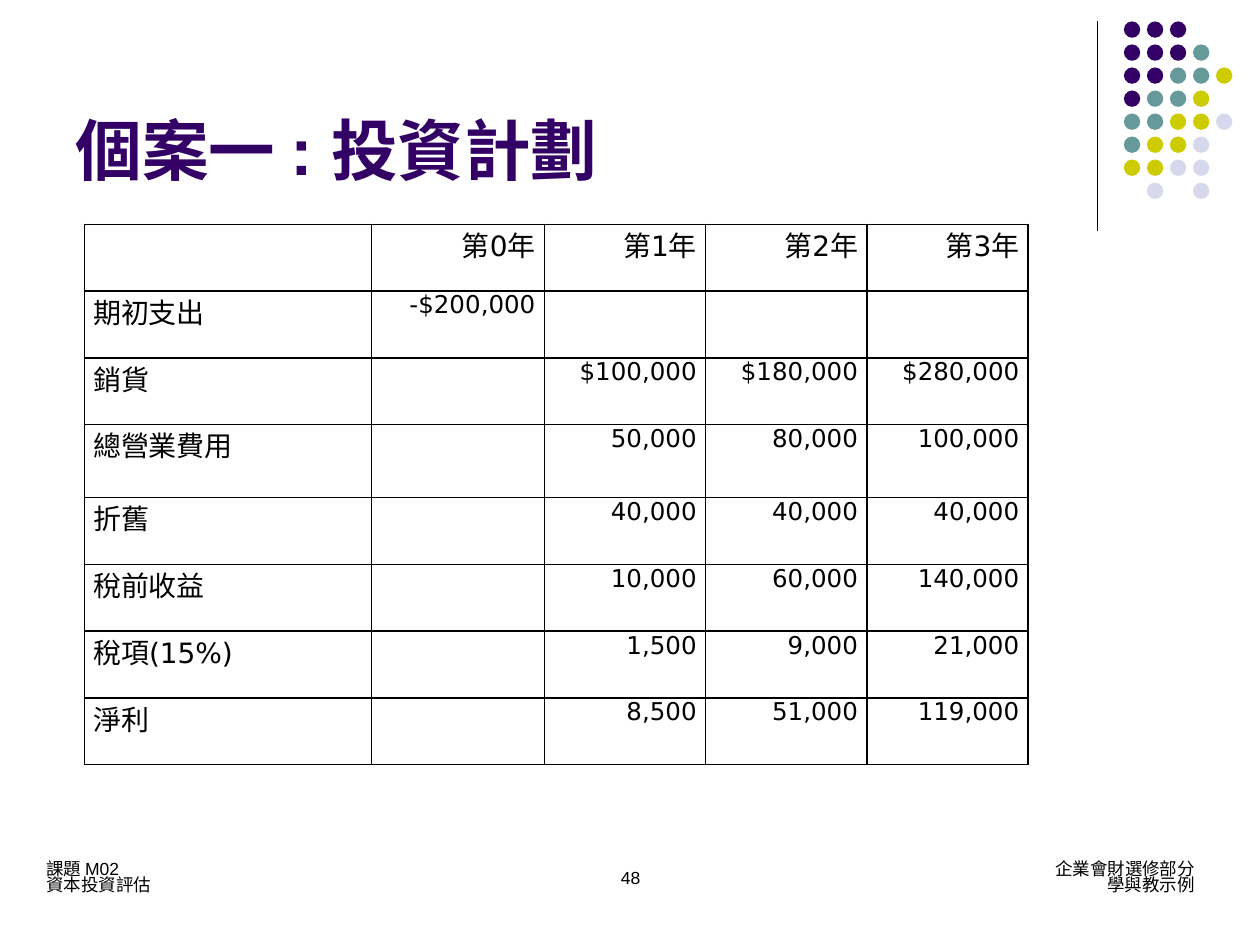
import pptx
import pptx.dml.color
import pptx.enum.shapes
import pptx.enum.text
import pptx.oxml
import pptx.oxml.ns
import pptx.util
from dataclasses import dataclass

Inches = pptx.util.Inches
Pt = pptx.util.Pt
RGB = pptx.dml.color.RGBColor.from_string
ALIGN = pptx.enum.text.PP_ALIGN
ANCHOR = pptx.enum.text.MSO_ANCHOR
AUTO_SIZE = pptx.enum.text.MSO_AUTO_SIZE
SHAPE = pptx.enum.shapes.MSO_SHAPE


@dataclass(frozen=True)
class Theme:
    black: str = "000000"
    purple: str = "330066"
    teal: str = "669999"
    olive: str = "CCCC00"
    lilac: str = "D8D8EC"
    heading_font: str = "Arial"
    table_font: str = "DejaVu Sans"
    total_font: str = "Times New Roman"
    title_size: int = 38
    label_size: int = 16
    value_size: int = 14
    footer_size: int = 10


theme = Theme()


def style(p, font, size, color=theme.black, align=ALIGN.LEFT, bold=False):
    p.font.name = font
    p.font.size = Pt(size)
    p.font.color.rgb = RGB(color)
    p.font.bold = bold
    p.alignment = align


def border(cell):
    """Draw a thin black line on all four sides of a table cell."""
    tcPr = cell._tc.get_or_add_tcPr()
    for i, side in enumerate(("lnL", "lnR", "lnT", "lnB")):
        ln = pptx.oxml.parse_xml(
            f'<a:{side} {pptx.oxml.ns.nsdecls("a")} w="{Pt(1)}"><a:solidFill>'
            f'<a:srgbClr val="{theme.black}"/></a:solidFill></a:{side}>')
        tcPr.insert(i, ln)


prs = pptx.Presentation()
prs.slide_width, prs.slide_height = Inches(10), Inches(7.5)
s = prs.slides.add_slide(prs.slide_layouts[5])

# Corner ornament: a vertical rule and a grid of dots
rule = s.shapes.add_connector(pptx.enum.shapes.MSO_CONNECTOR.STRAIGHT,
                              Inches(8.71), Inches(0.17), Inches(8.71), Inches(1.83))
rule.line.color.rgb = RGB(theme.black)
rule.line.width = Pt(0.75)
rule._element.spPr.append(pptx.oxml.parse_xml(
    f'<a:effectLst {pptx.oxml.ns.nsdecls("a")}/>'))

dot_colors = {"P": theme.purple, "T": theme.teal, "O": theme.olive, "L": theme.lilac}
dot_rows = ["PPP", "PPPT", "PPTTO", "PTTO", "TTOOL", "TOOL", "OOLL", " L L"]
dot_pitch = Inches(0.18) + Pt(0.2)
dots = s.shapes.add_group_shape()
for row, keys in enumerate(dot_rows):
    for col, key in enumerate(keys):
        if key == " ":
            continue
        dot = dots.shapes.add_shape(SHAPE.OVAL, Inches(8.92) + col * dot_pitch,
                                    Inches(0.17) + row * dot_pitch,
                                    Inches(0.13), Inches(0.13))
        dot.shadow.inherit = False
        dot.fill.solid()
        dot.fill.fore_color.rgb = RGB(dot_colors[key])
        dot.line.fill.background()

# Footers and page number: left, top, width, height, alignment, line spacing, lines
footers = [
    (0.27, 6.8, 2.03, 0.35, ALIGN.LEFT, 0.75, ["課題 M02", "資本投資評估"]),
    (7.36, 6.8, 2.22, 0.35, ALIGN.RIGHT, 0.75, ["企業會財選修部分", "學與教示例"]),
    (3.42, 6.83, 3.17, 0.5, ALIGN.CENTER, 1.0, ["48"]),
]
for left, top, width, height, align, spacing, lines in footers:
    box = s.shapes.add_textbox(Inches(left), Inches(top), Inches(width), Inches(height))
    tf = box.text_frame
    tf.word_wrap = True
    tf.auto_size = AUTO_SIZE.SHAPE_TO_FIT_TEXT if len(lines) > 1 else AUTO_SIZE.NONE
    tf.text = "\n".join(lines)
    for p in tf.paragraphs:
        style(p, theme.heading_font, theme.footer_size, align=align)
        p.line_spacing = spacing

# Title
title = s.shapes.title
title.left, title.top = Inches(0.5), Inches(0.13)
title.width, title.height = Inches(8.25), Inches(1.42)
tf = title.text_frame
tf.text = "個案一 : 投資計劃"
tf.word_wrap = True
tf.auto_size = AUTO_SIZE.NONE
tf.vertical_anchor = ANCHOR.BOTTOM
style(tf.paragraphs[0], theme.heading_font, theme.title_size, theme.purple, bold=True)

# Investment plan table
plan = [
    ["", "第0年", "第1年", "第2年", "第3年"],
    ["期初支出", "-$200,000", "", "", ""],
    ["銷貨", "", "$100,000", "$180,000", "$280,000"],
    ["總營業費用", "", "50,000", "80,000", "100,000"],
    ["折舊", "", "40,000", "40,000", "40,000"],
    ["稅前收益", "", "10,000", "60,000", "140,000"],
    ["稅項(15%)", "", "1,500", "9,000", "21,000"],
    ["淨利", "", "8,500", "51,000", "119,000"],
]
col_widths = [2.28, 1.37, 1.28, 1.28, 1.28]
row_heights = [0.53, 0.53, 0.53, 0.58, 0.53, 0.53, 0.53, 0.53]
frame = s.shapes.add_table(len(plan), len(col_widths), Inches(0.67), Inches(1.78),
                           Inches(sum(col_widths)), Inches(sum(row_heights)))
table = frame.table
table.first_row = table.horz_banding = False
for column, width in zip(table.columns, col_widths):
    column.width = Inches(width)
for r, values in enumerate(plan):
    table.rows[r].height = Inches(row_heights[r])
    for c, value in enumerate(values):
        cell = table.cell(r, c)
        cell.fill.background()
        border(cell)
        cell.margin_left = cell.margin_right = Inches(0.07)
        cell.margin_top = cell.margin_bottom = 0
        cell.vertical_anchor = ANCHOR.TOP
        cell.text = value
        is_total_label = r == len(plan) - 1 and c == 0
        style(cell.text_frame.paragraphs[0],
              theme.total_font if is_total_label else theme.table_font,
              theme.label_size if r == 0 or c == 0 else theme.value_size,
              align=ALIGN.LEFT if c == 0 else ALIGN.RIGHT)

prs.save("out.pptx")
